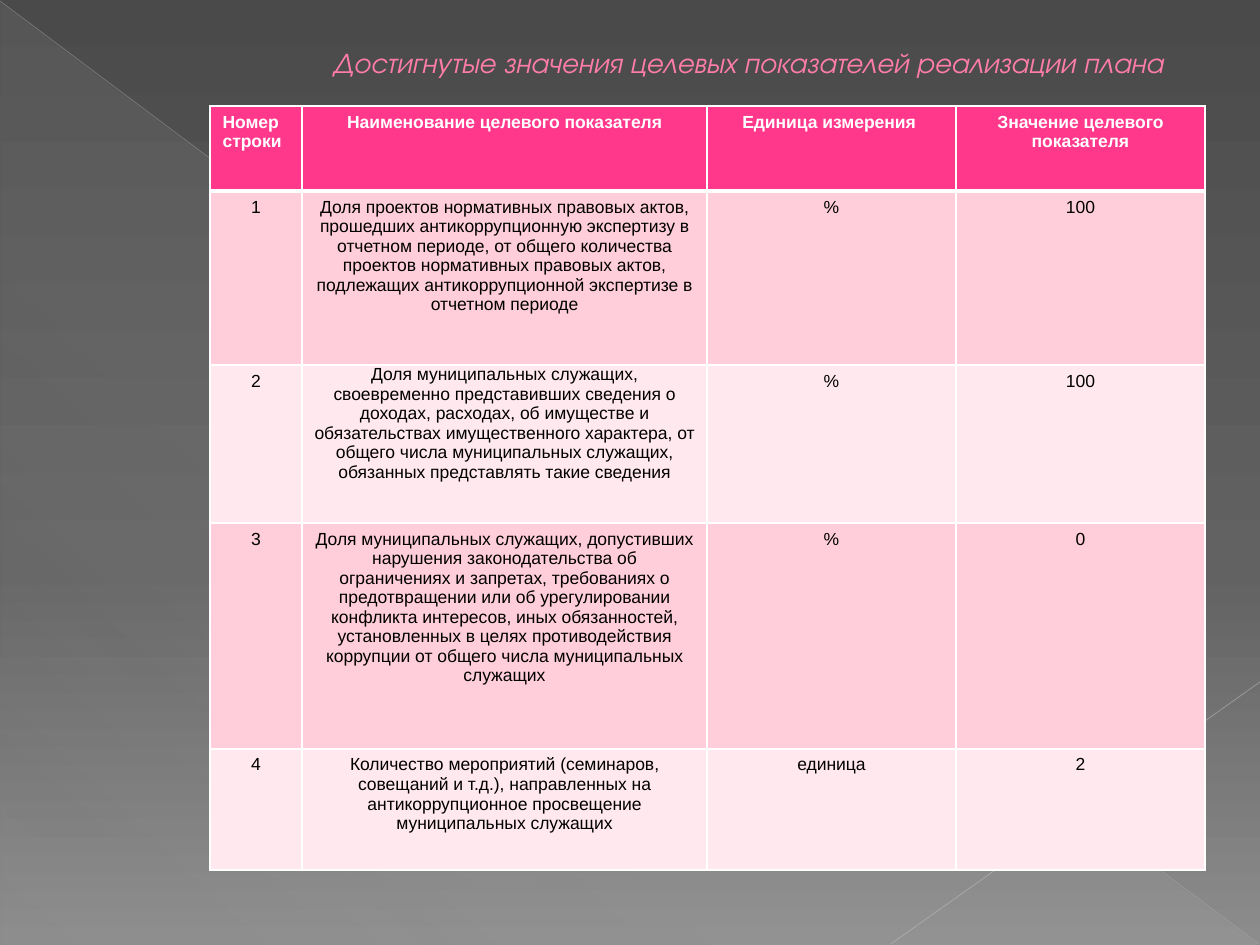
import pptx
import pptx.util
import pptx.dml.color
import pptx.oxml
import pptx.oxml.ns
from pptx.enum.shapes import MSO_CONNECTOR, MSO_SHAPE
from pptx.enum.text import MSO_ANCHOR, PP_ALIGN

PX = 914400 // 126
NS = pptx.oxml.ns.nsdecls("a")
COLS = [92, 405, 249, 249]
ROWS = [85, 174, 158, 226, 121]
TABLE = [
    ["Номер строки", "Наименование целевого показателя", "Единица измерения ",
     "Значение целевого показателя"],
    ["1", "Доля проектов нормативных правовых актов, прошедших антикоррупционную "
     "экспертизу в отчетном периоде, от общего количества проектов нормативных "
     "правовых актов, подлежащих антикоррупционной экспертизе в отчетном периоде",
     "%", "100"],
    ["2", "Доля муниципальных служащих, своевременно представивших сведения о "
     "доходах, расходах, об имуществе и обязательствах имущественного характера, "
     "от общего числа муниципальных служащих, обязанных представлять такие сведения",
     "%", "100"],
    ["3", "Доля муниципальных служащих, допустивших нарушения законодательства об "
     "ограничениях и запретах, требованиях о предотвращении или об урегулировании "
     "конфликта интересов, иных обязанностей, установленных в целях противодействия "
     "коррупции от общего числа муниципальных служащих", "%", "0"],
    ["4", "Количество мероприятий (семинаров, совещаний и т.д.), направленных на "
     "антикоррупционное просвещение муниципальных служащих", "единица", "2"],
]


def px(*values):
    """Turn pixel lengths into EMU."""
    return [pptx.util.Emu(v * PX) for v in values]


def rgb(color):
    """Return the colour of a hex string."""
    return pptx.dml.color.RGBColor.from_string(color)


def set_gradient(fill, stops, angle):
    """Give a fill a linear gradient of (position, colour, opacity) stops."""
    fill.gradient()
    grad = fill._xPr.find(pptx.oxml.ns.qn("a:gradFill"))
    for child in list(grad):
        grad.remove(child)
    marks = "".join(
        f'<a:gs pos="{pos * 1000}"><a:srgbClr val="{color}">'
        f'<a:alpha val="{alpha * 1000}"/></a:srgbClr></a:gs>'
        for pos, color, alpha in stops)
    grad.append(pptx.oxml.parse_xml(f"<a:gsLst {NS}>{marks}</a:gsLst>"))
    grad.append(pptx.oxml.parse_xml(f'<a:lin {NS} ang="{angle * 60000}" scaled="0"/>'))


def add_line(s, ends, color, width, alpha):
    """Draw a thin translucent straight line."""
    line = s.shapes.add_connector(MSO_CONNECTOR.STRAIGHT, *px(*ends))
    line.line.color.rgb = rgb(color)
    line.line.width = pptx.util.Pt(width)
    clr = line._element.spPr.find(".//" + pptx.oxml.ns.qn("a:srgbClr"))
    clr.append(pptx.oxml.parse_xml(f'<a:alpha {NS} val="{alpha * 1000}"/>'))
    line._element.spPr.append(pptx.oxml.parse_xml(f"<a:effectLst {NS}/>"))


def add_backdrop(s):
    """Paint the background, the corner triangle and the two lines."""
    set_gradient(s.background.fill,
                 [(0, "4A4A4A", 100), (60, "626262", 100), (100, "8C8C8C", 100)], 90)
    sp = s.shapes.add_shape(MSO_SHAPE.RIGHT_TRIANGLE, *px(1, 2, 1258, 943))
    sp.shadow.inherit = False
    sp.line.fill.background()
    set_gradient(sp.fill, [(0, "D2D2D2", 10), (70, "D2D2D2", 8), (100, "D2D2D2", 1)], 133)
    add_line(s, (0, 1, 1259, 944), "BFBFBF", 0.39, 35)
    add_line(s, (1260, 682, 891, 944), "C6C6C6", 0.47, 45)


def set_font(p, name, size, color, bold=False, italic=False):
    """Set the font of a paragraph."""
    p.font.name, p.font.size = name, pptx.util.Pt(size)
    p.font.bold, p.font.italic = bold, italic
    p.font.color.rgb = rgb(color)


def add_title(s, text):
    """Write the outlined italic title."""
    tf = s.shapes.add_textbox(*px(198, 38, 1033, 48)).text_frame
    tf.word_wrap = True
    tf.vertical_anchor = MSO_ANCHOR.MIDDLE
    p = tf.paragraphs[0]
    p.alignment = PP_ALIGN.CENTER
    p._p.get_or_add_pPr().set("marL", str(67 * PX))
    r = p.add_run()
    r.text = text
    set_font(p, "TeX Gyre Adventor", 16.2, "FF7DA7", italic=True)
    r._r.get_or_add_rPr().insert(0, pptx.oxml.parse_xml(
        f'<a:ln {NS} w="6350"><a:solidFill><a:srgbClr val="B12761"/></a:solidFill></a:ln>'))


def set_borders(cell, widths):
    """Give a cell white borders: left, right, top and bottom in points."""
    for i, (side, width) in enumerate(zip("LRTB", widths)):
        cell._tc.get_or_add_tcPr().insert(i, pptx.oxml.parse_xml(
            f'<a:ln{side} {NS} w="{width * 12700}"><a:solidFill>'
            f'<a:srgbClr val="FFFFFF"/></a:solidFill></a:ln{side}>'))


def fill_cell(cell, text, row, col):
    """Write and colour one table cell."""
    header = row == 0
    cell.text = text
    cell.fill.solid()
    cell.fill.fore_color.rgb = rgb("FF388C" if header else ("FFE8EE", "FFCEDA")[row % 2])
    set_borders(cell, (1, 1, 3 if row == 1 else 1, 3 if header else 1))
    p = cell.text_frame.paragraphs[0]
    p.alignment = PP_ALIGN.LEFT if header and col == 0 else PP_ALIGN.CENTER
    set_font(p, "Arial", 10, "FFFFFF" if header else "000000", bold=header)


def add_indicators(s):
    """Add the table of target indicators."""
    table = s.shapes.add_table(len(ROWS), len(COLS),
                               *px(210, 106, sum(COLS), sum(ROWS))).table
    for column, width in zip(table.columns, px(*COLS)):
        column.width = width
    for row, height in zip(table.rows, px(*ROWS)):
        row.height = height
    for i, texts in enumerate(TABLE):
        for j, text in enumerate(texts):
            fill_cell(table.cell(i, j), text, i, j)
    tight = table.cell(2, 1)
    tight.margin_left, tight.margin_right, tight.margin_top, tight.margin_bottom = px(9, 9, 0, 0)


def main():
    """Build and save the slide."""
    prs = pptx.Presentation()
    prs.slide_width, prs.slide_height = px(1260, 945)
    s = prs.slides.add_slide(prs.slide_layouts[6])
    add_backdrop(s)
    add_title(s, "Достигнутые значения целевых показателей реализации плана")
    add_indicators(s)
    prs.save("out.pptx")


if __name__ == "__main__":
    main()
